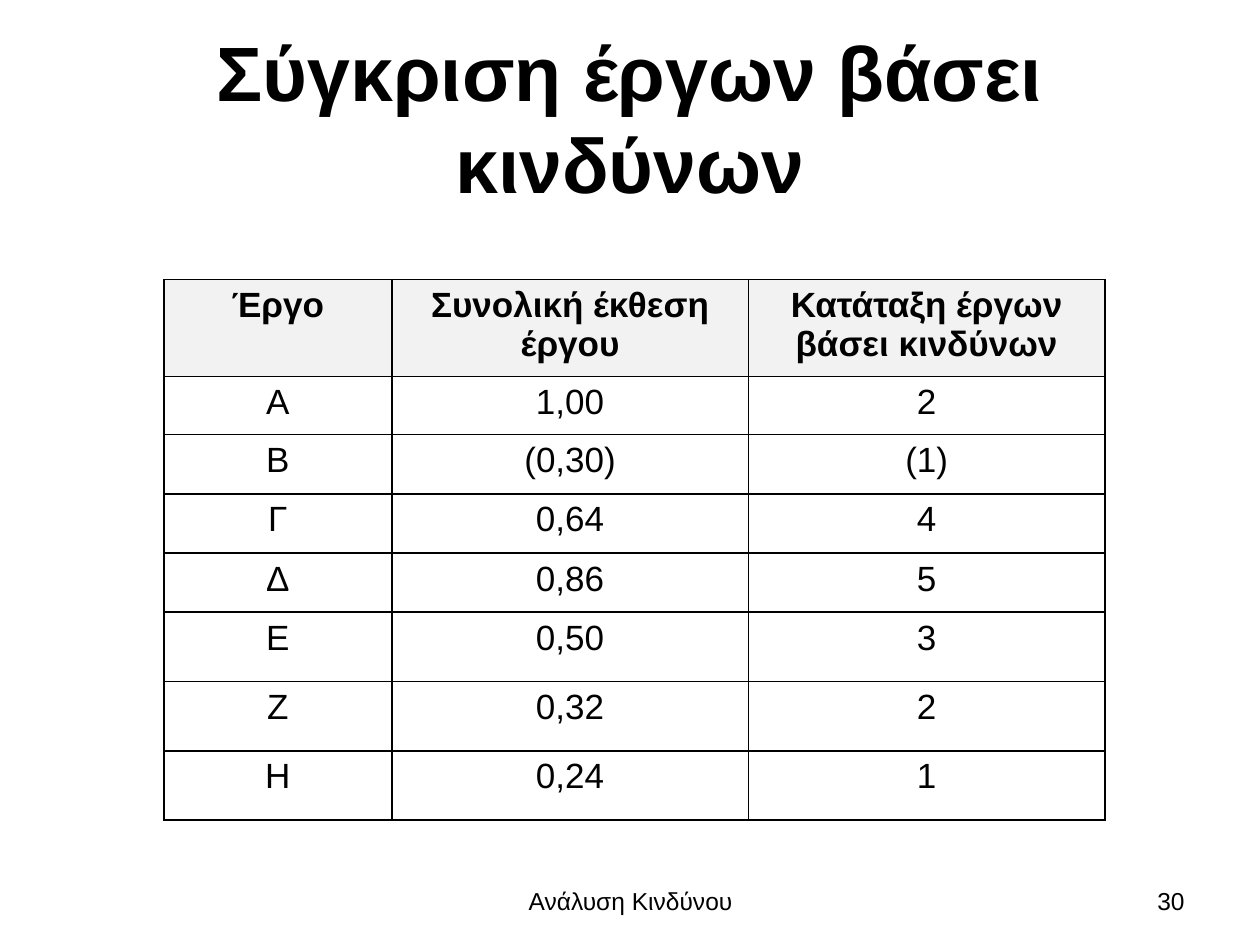
from lxml import etree
from pptx import Presentation
from pptx.dml.color import RGBColor
from pptx.enum import text
from pptx.oxml.ns import qn
from pptx.util import Inches, Pt

# Content
TITLE = "Σύγκριση έργων βάσει κινδύνων"
FOOTER = "Ανάλυση Κινδύνου"
PAGE = "30"
PROJECTS = [
    ("Έργο", "Συνολική έκθεση έργου", "Κατάταξη έργων βάσει κινδύνων"),
    ("Α", "1,00", "2"),
    ("Β", "(0,30)", "(1)"),
    ("Γ", "0,64", "4"),
    ("Δ", "0,86", "5"),
    ("Ε", "0,50", "3"),
    ("Ζ", "0,32", "2"),
    ("Η", "0,24", "1"),
]
COLUMN_WIDTHS = [1.81, 2.83, 2.83]
ROW_HEIGHTS = [0.77, 0.46] + [0.47] * 3 + [0.55] * 3
COLORS = {"ink": "000000", "header": "F2F2F2"}
FONT = "Arial"
CENTER, RIGHT = text.PP_ALIGN.CENTER, text.PP_ALIGN.RIGHT


def write(frame, words, size, align=CENTER, bold=False):
    frame.text = words
    frame.word_wrap = True
    paragraph = frame.paragraphs[0]
    paragraph.alignment = align
    font = paragraph.runs[0].font
    font.name, font.size, font.bold = FONT, Pt(size), bold
    font.color.rgb = RGBColor.from_string(COLORS["ink"])


def add_label(slide, box, words, size, align=CENTER, bold=False):
    frame = slide.shapes.add_textbox(*map(Inches, box)).text_frame
    write(frame, words, size, align, bold)
    frame.vertical_anchor = text.MSO_ANCHOR.MIDDLE


def add_borders(cell):
    properties = cell._tc.get_or_add_tcPr()
    for position, side in enumerate(("lnL", "lnR", "lnT", "lnB")):
        line = etree.Element(qn(f"a:{side}"), w=str(Pt(1)))
        fill = etree.SubElement(line, qn("a:solidFill"))
        etree.SubElement(fill, qn("a:srgbClr"), val=COLORS["ink"])
        properties.insert(position, line)


def add_project_table(slide):
    table = slide.shapes.add_table(
        len(PROJECTS), len(COLUMN_WIDTHS), Inches(1.3), Inches(2.22),
        Inches(sum(COLUMN_WIDTHS)), Inches(sum(ROW_HEIGHTS))).table
    table.first_row = table.horz_banding = False
    for column, width in zip(table.columns, COLUMN_WIDTHS):
        column.width = Inches(width)
    for r, (height, values) in enumerate(zip(ROW_HEIGHTS, PROJECTS)):
        table.rows[r].height = Inches(height)
        for c, value in enumerate(values):
            cell = table.cell(r, c)
            write(cell.text_frame, value, 20, bold=r == 0)
            if r == 0:
                cell.fill.solid()
                cell.fill.fore_color.rgb = RGBColor.from_string(COLORS["header"])
            else:
                cell.fill.background()
            add_borders(cell)


def main():
    deck = Presentation()
    deck.slide_width, deck.slide_height = Inches(10), Inches(7.5)
    slide = deck.slides.add_slide(deck.slide_layouts[6])

    # Title, table, footer
    add_label(slide, (0.5, 0.3, 9, 1.25), TITLE, 44, bold=True)
    add_project_table(slide)
    add_label(slide, (3.42, 6.95, 3.17, 0.4), FOOTER, 14)
    add_label(slide, (7.17, 6.95, 2.33, 0.4), PAGE, 14, RIGHT)

    deck.save("out.pptx")


if __name__ == "__main__":
    main()
